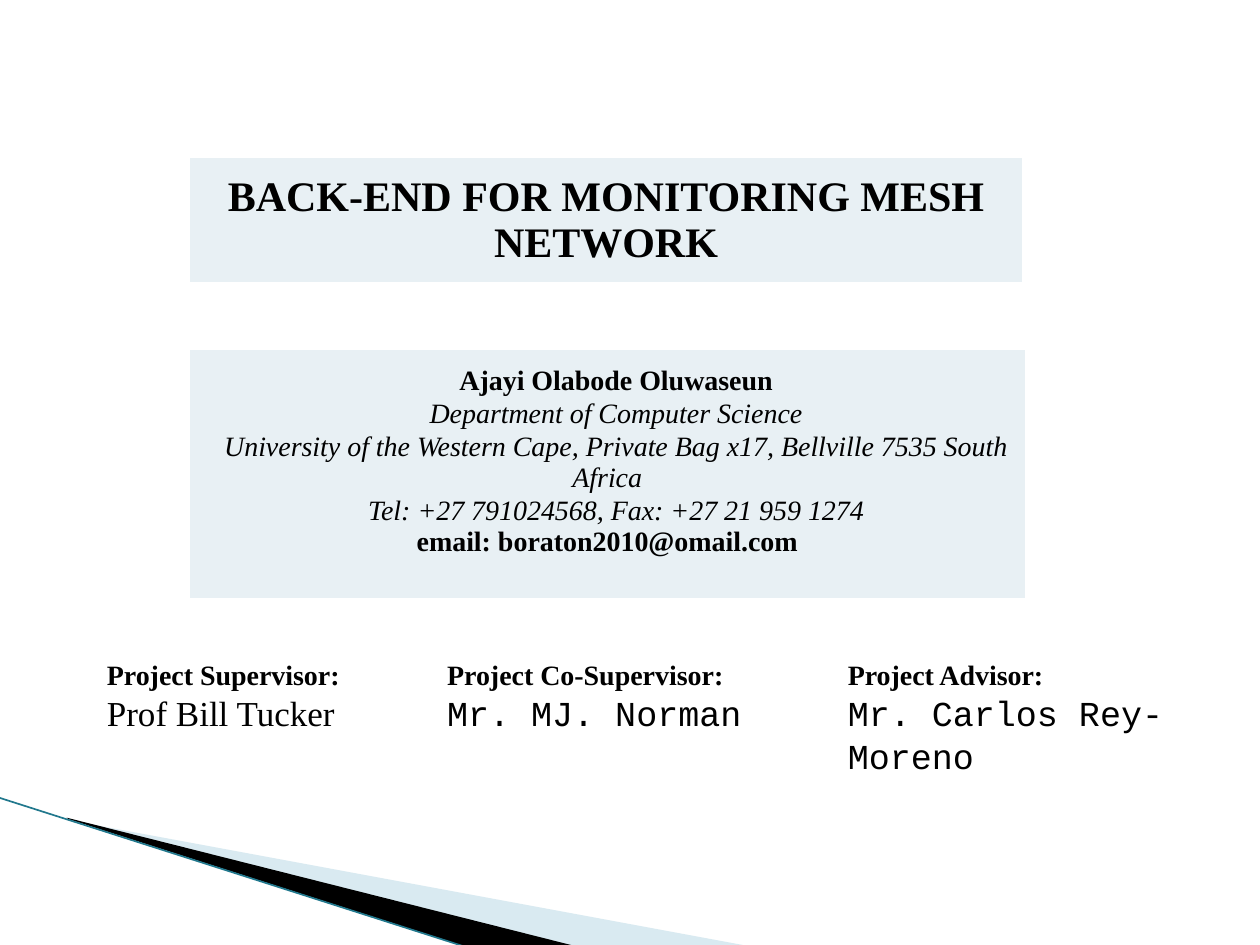
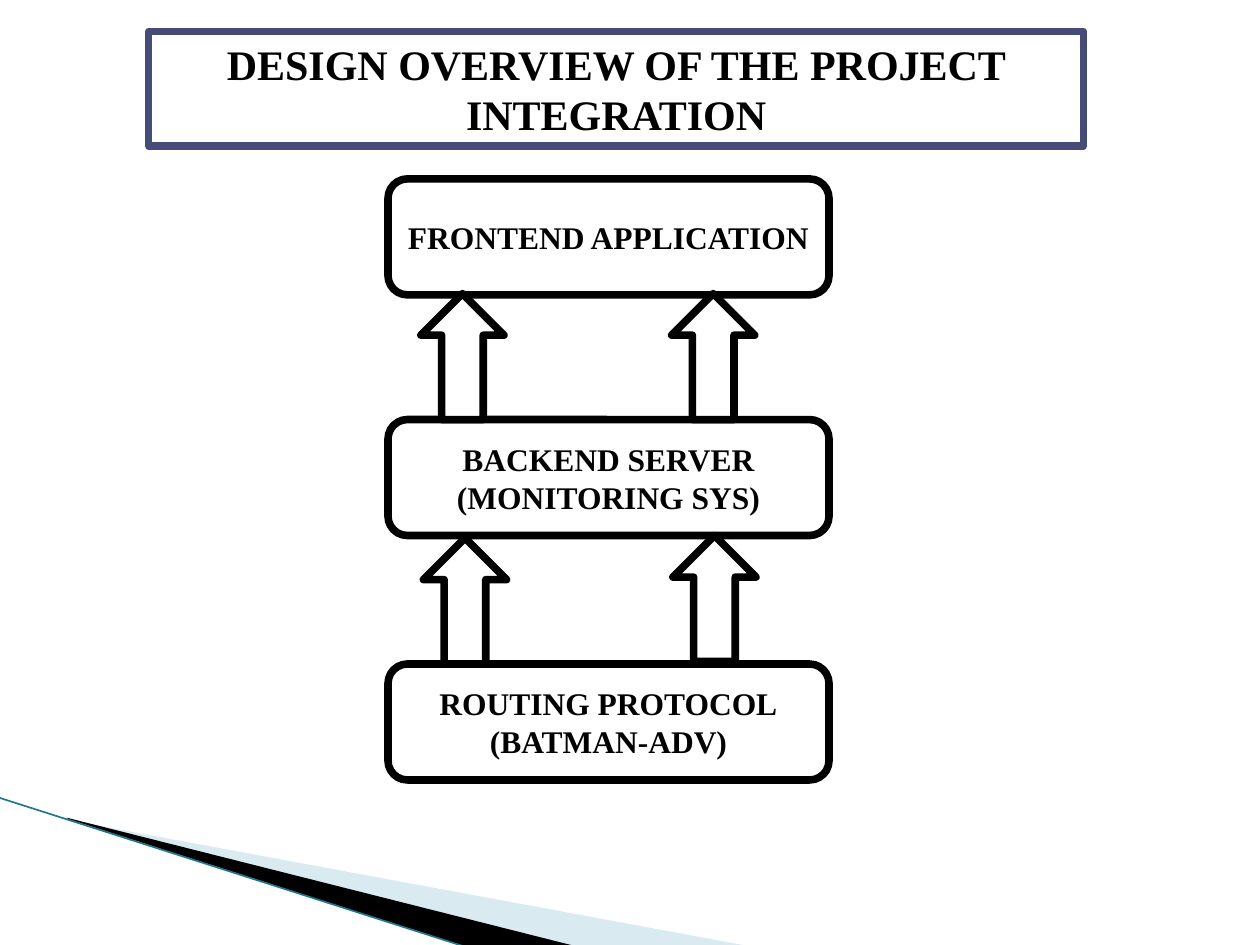
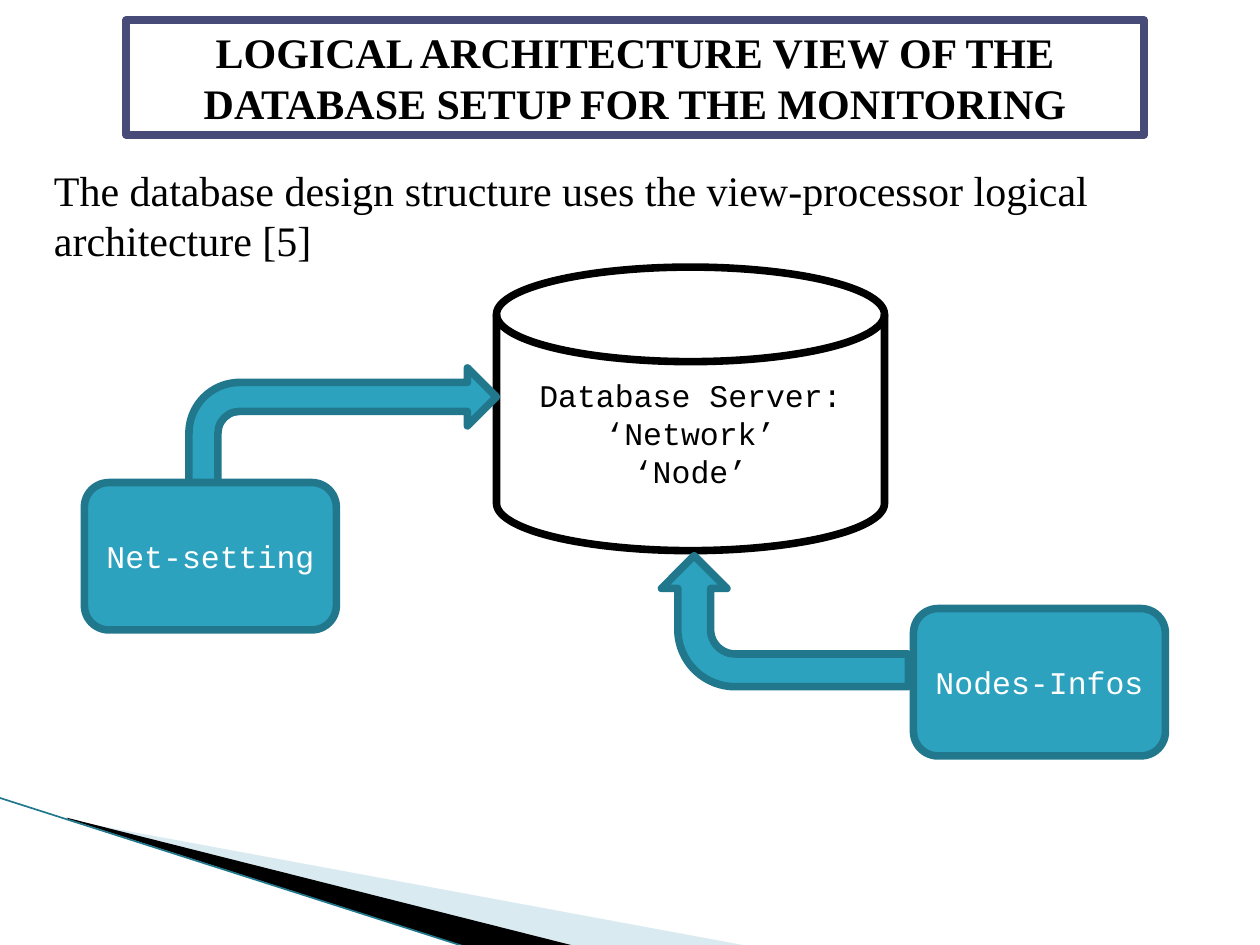
import pptx
import pptx.util
import pptx.dml.color
import pptx.enum.shapes
import pptx.enum.text
from lxml import etree

Inches, Pt = pptx.util.Inches, pptx.util.Pt
SHAPE = pptx.enum.shapes.MSO_SHAPE
ANCHOR = pptx.enum.text.MSO_ANCHOR
LEFT, CENTER = pptx.enum.text.PP_ALIGN.LEFT, pptx.enum.text.PP_ALIGN.CENTER
NS = "http://schemas.openxmlformats.org/drawingml/2006/main"

COLORS = {
    "black": "000000", "white": "FFFFFF", "panel": "E8F0F4", "frame": "474B78",
    "teal": "2DA2BF", "teal_dark": "21788D", "wedge": "A0CBDC",
}
SERIF, MONO = "Times New Roman", "Courier New"
LINE_WIDTH = 4.33
LINE_PITCH = 1.21

HEADING = {"name": SERIF, "size": Pt(24), "bold": True}
BODY = {"name": SERIF, "size": Pt(24), "bold": False}
LABEL = {"name": SERIF, "size": Pt(18), "bold": True}
CODE = {"name": MONO, "size": Pt(18), "bold": False}
ROLE = {"name": SERIF, "size": Pt(16), "bold": True}
ADDRESS = {"name": SERIF, "size": Pt(16), "bold": False, "italic": True}

WEDGES = [
    ([(0.55, 6.51), (5.95, 7.51), (4.56, 7.51), (0.55, 6.5)], "wedge", 40),
    ([(0.53, 6.49), (4.57, 7.51), (3.72, 7.52), (0.54, 6.5)], "black", 100),
]
EDGE = (-0.01, 6.33, 3.71, 7.52)

COVER_TITLE = [("BACK-END FOR MONITORING MESH NETWORK", HEADING)]
AUTHOR = [
    ("Ajayi Olabode Oluwaseun", ROLE),
    ("Department of Computer Science", ADDRESS),
    ("University of the Western Cape, Private Bag x17, Bellville 7535 South Africa", ADDRESS),
    ("Tel: +27 791024568, Fax: +27 21 959 1274", ADDRESS),
    ("email: boraton2010@omail.com", ROLE),
]
PEOPLE = [
    ("Project Supervisor:", "Prof Bill Tucker", SERIF, 2.7),
    ("Project Co-Supervisor:", "Mr. MJ. Norman", MONO, 3.18),
    ("Project Advisor:", "Mr. Carlos Rey-Moreno", MONO, 3.02),
]

OVERVIEW_TITLE = "DESIGN OVERVIEW OF THE PROJECT INTEGRATION"
LAYERS = [
    (1.42, ["FRONTEND APPLICATION"]),
    (3.33, ["BACKEND SERVER (MONITORING SYS)"]),
    (5.27, ["ROUTING PROTOCOL", "(BATMAN-ADV)"]),
]
UP_ARROWS = [(3.34, 2.33), (5.33, 2.33), (3.36, 4.27), (5.34, 4.25)]

DATABASE_TITLE = "LOGICAL ARCHITECTURE VIEW OF THE DATABASE SETUP FOR THE MONITORING"
DATABASE_INTRO = "The database design structure uses the view-processor logical architecture [5]"
DATABASE = ["Database Server:", "‘Network’", "‘Node’"]
BENT_ARROWS = [((1.5, 2.92, 2.44, 0.92), 0), ((5.71, 3.95, 1.04, 1.96), 270)]
SOURCES = [(0.67, 3.83, "Net-setting"), (7.25, 4.83, "Nodes-Infos")]


def rgb(name):
    return pptx.dml.color.RGBColor.from_string(COLORS[name])


def paint(shape, fill, line=None):
    shape.fill.solid()
    shape.fill.fore_color.rgb = rgb(fill)
    if line:
        shape.line.color.rgb = rgb(line)
        shape.line.width = Pt(LINE_WIDTH)
    else:
        shape.line.fill.background()


def write(tf, paragraphs, align=CENTER, color="black", pitch=LINE_PITCH):
    tf.word_wrap = True
    for i, (text, style) in enumerate(paragraphs):
        p = tf.add_paragraph() if i else tf.paragraphs[0]
        p.alignment = align
        if pitch:
            p.line_spacing = Pt(round(style["size"].pt * pitch, 1))
        r = p.add_run()
        r.text = text
        for key, value in style.items():
            setattr(r.font, key, value)
        r.font.color.rgb = rgb(color)


def add_box(s, kind, at, fill, line=None, paragraphs=(), align=CENTER,
            color="black", anchor=ANCHOR.MIDDLE, rotation=0):
    sp = s.shapes.add_shape(kind, *map(Inches, at))
    sp.shadow.inherit = False
    sp.rotation = rotation
    paint(sp, fill, line)
    sp.text_frame.vertical_anchor = anchor
    write(sp.text_frame, paragraphs, align, color)
    return sp


def add_panel(s, at, paragraphs):
    table = s.shapes.add_table(1, 1, *map(Inches, at)).table
    table.first_row = table.horz_banding = False
    cell = table.cell(0, 0)
    cell.fill.solid()
    cell.fill.fore_color.rgb = rgb("panel")
    for side in ("left", "right", "top", "bottom"):
        setattr(cell, f"margin_{side}", Inches(0.13))
    write(cell.text_frame, paragraphs, pitch=None)
    return cell.text_frame


def add_corner(s):
    for points, color, opacity in WEDGES:
        start, *rest = [tuple(map(Inches, point)) for point in points]
        builder = s.shapes.build_freeform(*start)
        builder.add_line_segments(rest, close=True)
        sp = builder.convert_to_shape()
        sp.shadow.inherit = False
        paint(sp, color)
        if opacity < 100:
            clr = sp._element.spPr.find(f".//{{{NS}}}srgbClr")
            etree.SubElement(clr, f"{{{NS}}}alpha", val=str(opacity * 1000))
    edge = s.shapes.add_connector(pptx.enum.shapes.MSO_CONNECTOR.STRAIGHT, *map(Inches, EDGE))
    edge.line.color.rgb = rgb("teal_dark")
    edge.line.width = Pt(0.95)
    etree.SubElement(edge._element.spPr, f"{{{NS}}}effectLst")


def add_slide(prs, title=None, at=None):
    s = prs.slides.add_slide(prs.slide_layouts[5 if title else 6])
    add_corner(s)
    if title:
        sp = s.shapes.title
        for key, value in zip(("left", "top", "width", "height"), at):
            setattr(sp, key, Inches(value))
        paint(sp, "white", "frame")
        tf = sp.text_frame
        tf.auto_size = pptx.enum.text.MSO_AUTO_SIZE.NONE
        tf.vertical_anchor = ANCHOR.TOP
        write(tf, [(title, HEADING)])
    return s


def cover(prs):
    s = add_slide(prs)
    left = 0.75
    for role, person, font, width in PEOPLE:
        name = {"name": font, "size": Pt(20), "bold": False}
        add_box(s, SHAPE.RECTANGLE, (left, 5.17, width, 1), "white",
                paragraphs=[(role, ROLE), (person, name)], align=LEFT, anchor=ANCHOR.TOP)
        left += width
    tf = add_panel(s, (1.5, 2.77, 6.64, 1.98), AUTHOR)
    for i, p in enumerate(tf.paragraphs[:-1]):
        p._p.get_or_add_pPr().set("indent", str(Inches(0.14)))
        if i:
            p.space_before = Pt(1)
    add_panel(s, (1.5, 1.25, 6.62, 0.98), COVER_TITLE)


def overview(prs):
    s = add_slide(prs, OVERVIEW_TITLE, (1.18, 0.25, 7.42, 0.91))
    for top, lines in LAYERS:
        add_box(s, SHAPE.ROUNDED_RECTANGLE, (3.08, top, 3.5, 0.92), "white", "black",
                [(line, LABEL) for line in lines])
    for left, top in UP_ARROWS:
        add_box(s, SHAPE.DOWN_ARROW, (left, top, 0.66, 1), "white", "black", rotation=180)


def database(prs):
    s = add_slide(prs, DATABASE_TITLE, (1, 0.16, 8.08, 0.91))
    add_box(s, SHAPE.FLOWCHART_MAGNETIC_DISK, (3.94, 2.12, 3.08, 2.25), "white", "black",
            [(line, CODE) for line in DATABASE])
    for at, rotation in BENT_ARROWS:
        add_box(s, SHAPE.BENT_ARROW, at, "teal", "teal_dark", rotation=rotation)
    for left, top, text in SOURCES:
        add_box(s, SHAPE.ROUNDED_RECTANGLE, (left, top, 2, 1.17), "teal", "teal_dark",
                [(text, CODE)], color="white")
    tb = s.shapes.add_textbox(*map(Inches, (0.33, 1.25, 9.5, 0.91)))
    write(tb.text_frame, [(DATABASE_INTRO, BODY)], LEFT)


def main():
    prs = pptx.Presentation()
    prs.slide_width, prs.slide_height = Inches(10), Inches(7.5)
    for build in (cover, overview, database):
        build(prs)
    prs.save("out.pptx")


if __name__ == "__main__":
    main()
